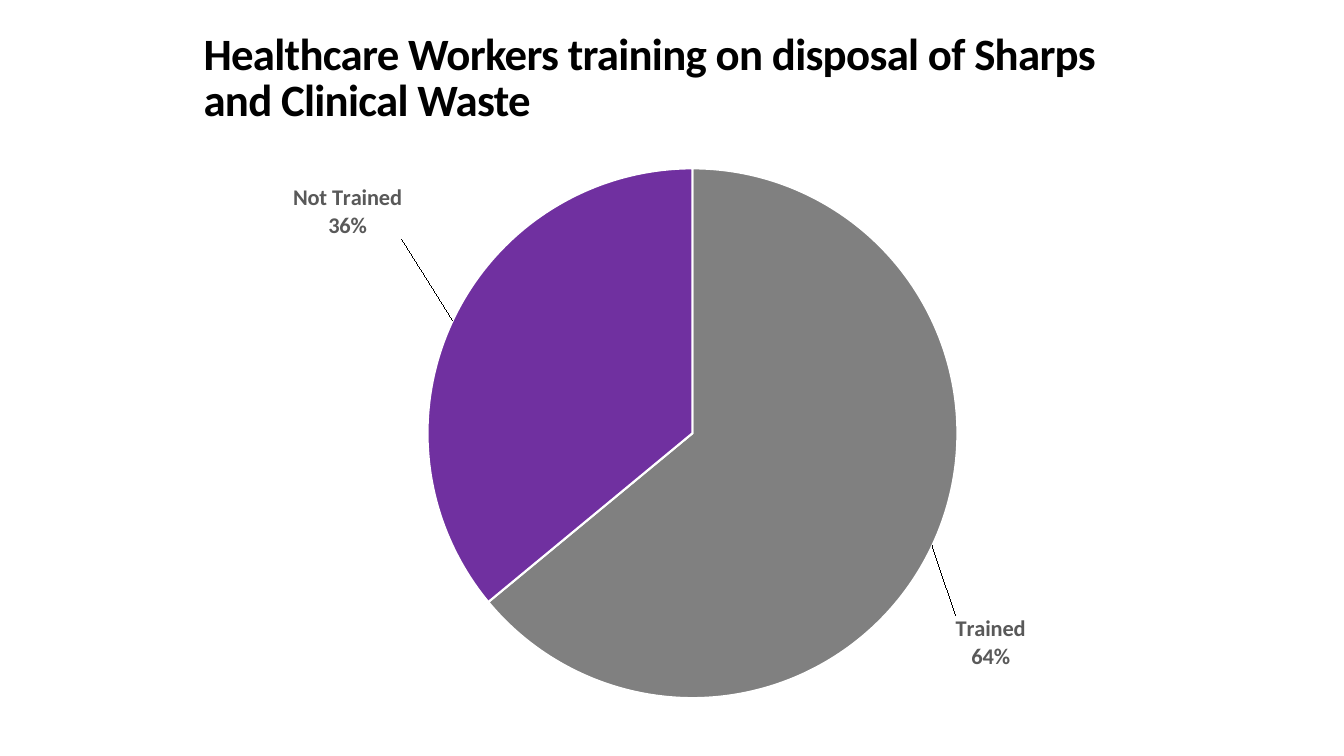
"""Build a slide with a pie chart of healthcare workers' waste disposal training."""
import lxml.etree
import pptx
import pptx.chart.data
import pptx.dml.color
import pptx.enum.chart
import pptx.enum.text
import pptx.oxml
import pptx.util
from pptx.util import Inches

THEME = {
    "font": "Calibri", "title": "000000", "label": "595959", "edge": "FFFFFF",
    "title_size": 32, "label_size": 16,
}
SLICES = [
    {"name": "Trained", "value": 64, "color": "808080", "shift": (0.02, 0.12)},
    {"name": "Not Trained", "value": 36, "color": "7030A0", "shift": (-0.05, -0.14)},
]
PIE_AREA = {"x": 0.23, "y": 0.025, "w": 0.584, "h": 0.946}


def rgb(value):
    return pptx.dml.color.RGBColor.from_string(value)


def add_text(s, text, left, top, width, height, size, color, bold=False, line=1.0, spacing=0):
    tf = s.shapes.add_textbox(Inches(left), Inches(top), Inches(width), Inches(height)).text_frame
    tf.word_wrap = True
    tf.vertical_anchor = pptx.enum.text.MSO_ANCHOR.MIDDLE
    p = tf.paragraphs[0]
    p.line_spacing = line
    r = p.add_run()
    r.text = text
    r.font.name = THEME["font"]
    r.font.size = pptx.util.Pt(size)
    r.font.bold = bold
    r.font.color.rgb = rgb(color)
    r.font._element.set("spc", str(int(spacing * 100)))


prs = pptx.Presentation()
prs.slide_width = Inches(13.33)
prs.slide_height = Inches(7.5)
s = prs.slides.add_slide(prs.slide_layouts[6])

add_text(s, "Healthcare Workers training on disposal of Sharps and Clinical Waste",
         1.92, 0.25, 9.42, 1.08, size=THEME["title_size"], color=THEME["title"],
         bold=True, line=0.85, spacing=-0.5)

data = pptx.chart.data.CategoryChartData()
data.categories = [item["name"] for item in SLICES]
data.add_series("Series 1", [item["value"] for item in SLICES])
chart = s.shapes.add_chart(pptx.enum.chart.XL_CHART_TYPE.PIE, Inches(2.17), Inches(1.53),
                           Inches(9), Inches(5.56), data).chart
chart.has_title = False
chart.has_legend = False
chart.font.name = THEME["font"]
chart.font.size = pptx.util.Pt(10)
chart.font.color.rgb = rgb(THEME["title"])
plot = chart.plots[0]
plot.vary_by_categories = False
ser = plot.series[0]

labels = ser.data_labels
labels.number_format = "0%"
labels.number_format_is_linked = False
labels.show_percentage = True
labels.show_category_name = True
labels.show_value = False
point_labels = [ser.points[i].data_label for i in range(len(SLICES))]
for label in [labels, *point_labels]:
    label.position = pptx.enum.chart.XL_LABEL_POSITION.OUTSIDE_END
    label.font.name = THEME["font"]
    label.font.size = pptx.util.Pt(THEME["label_size"])
    label.font.bold = True
    label.font.color.rgb = rgb(THEME["label"])

for i, item in enumerate(SLICES):
    fmt = ser.points[i].format
    fmt.fill.solid()
    fmt.fill.fore_color.rgb = rgb(item["color"])
    fmt.line.color.rgb = rgb(THEME["edge"])
    fmt.line.width = pptx.util.Pt(1.5)

C = "{http://schemas.openxmlformats.org/drawingml/2006/chart}"
space = chart._chartSpace
for flag, value in {"showVal": "0", "showCatName": "1", "showPercent": "1"}.items():
    for node in space.iter(C + flag):
        node.set("val", value)
for node in list(space.iter(C + "showBubbleSize")):
    separator = lxml.etree.Element(C + "separator")
    separator.text = "\n"
    node.addnext(separator)

layouts = [(node.find(C + "idx"), dict(zip("xy", item["shift"])))
           for node, item in zip(space.iter(C + "dLbl"), SLICES)]
area = next(space.iter(C + "plotArea"))
for old in area.findall(C + "layout"):
    area.remove(old)
layouts.append((None, {"layoutTarget": "inner", "xMode": "edge", "yMode": "edge", **PIE_AREA}))
for anchor, settings in layouts:
    layout = lxml.etree.Element(C + "layout")
    manual = lxml.etree.SubElement(layout, C + "manualLayout")
    for tag, value in settings.items():
        lxml.etree.SubElement(manual, C + tag).set("val", str(value))
    if anchor is None:
        area.insert(0, layout)
    else:
        anchor.addnext(layout)

prs.save("out.pptx")
